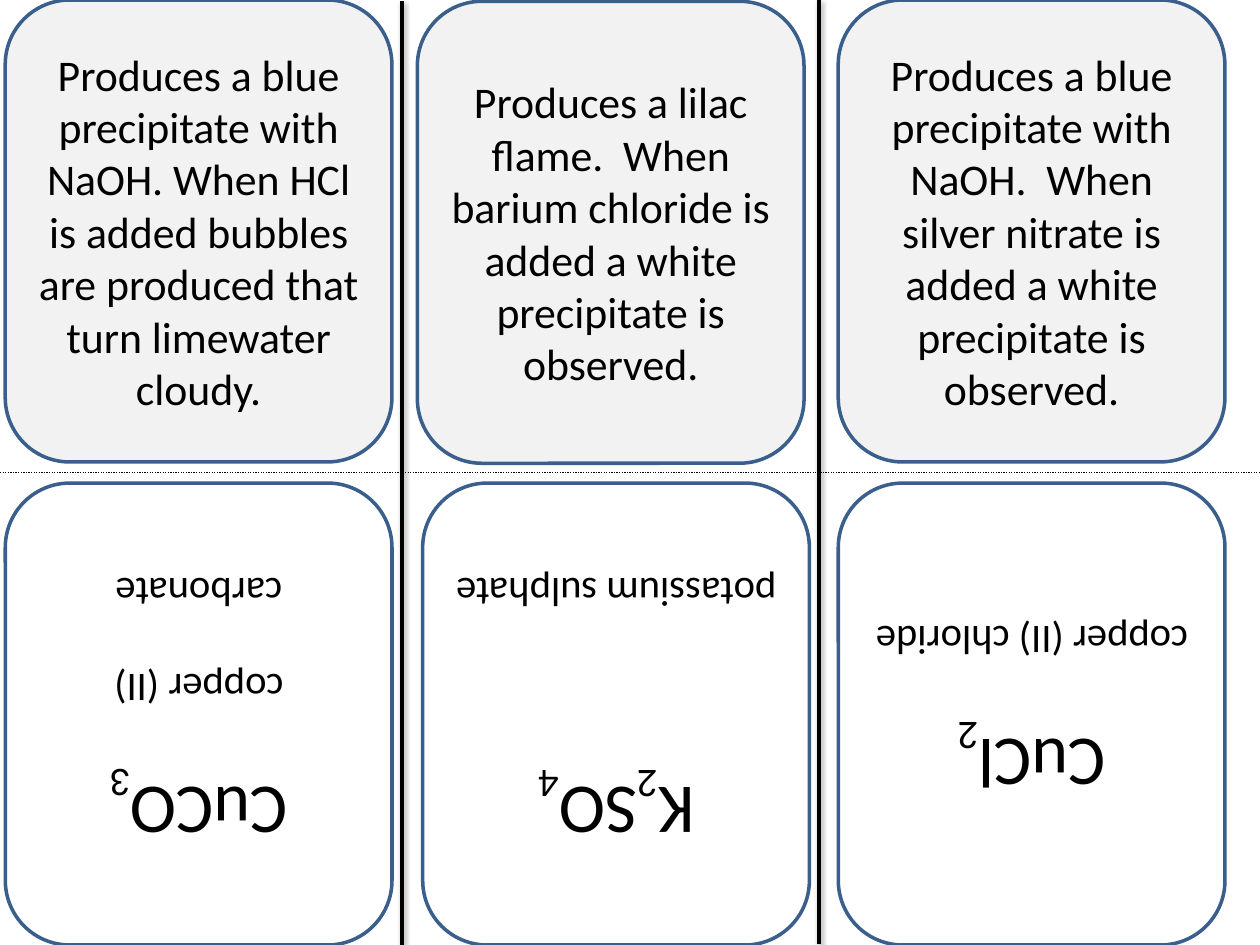
from lxml.etree import SubElement
from pptx import Presentation
from pptx.dml.color import RGBColor
from pptx.enum.dml import MSO_LINE
from pptx.enum.shapes import MSO_CONNECTOR, MSO_SHAPE
from pptx.enum.text import MSO_ANCHOR, PP_ALIGN
from pptx.oxml.ns import qn
from pptx.util import Pt

CARD_W, CARD_H = 221, 264
ANSWER_TOP = 276
CARDS = [
    (3, 0, 3,
     "Produces a blue precipitate with NaOH. When HCl is added bubbles "
     "are produced that turn limewater cloudy.",
     ["CuCO", "3"], "copper (II) carbonate", 0),
    (238.5, 0.75, 241.5,
     "Produces a lilac flame.  When barium chloride is added a white "
     "precipitate is observed.",
     ["K", "2", "SO", "4"], "potassium sulphate", 55),
    (479, 0, 479,
     "Produces a blue precipitate with NaOH.  When silver nitrate is added "
     "a white precipitate is observed.",
     ["CuCl", "2"], "copper (II) chloride", 0),
]


def rgb(value):
    """Turn a hex string into a colour."""
    return RGBColor.from_string(value)


def add_run(p, text, size=40, color="000000", font="Calibri", sub=False):
    """Add a formatted run to a paragraph."""
    r = p.add_run()
    r.text = text
    r.font.size = Pt(size)
    r.font.name = font
    r.font.color.rgb = rgb(color)
    if sub:
        r._r.get_or_add_rPr().set("baseline", "-25000")


def add_card(s, x, y, fill, rotation=0):
    """Add a rounded card and return its text frame."""
    sp = s.shapes.add_shape(MSO_SHAPE.ROUNDED_RECTANGLE,
                            Pt(x), Pt(y), Pt(CARD_W), Pt(CARD_H))
    sp.shadow.inherit = False
    sp.rotation = rotation
    sp.fill.solid()
    sp.fill.fore_color.rgb = rgb(fill)
    sp.line.color.rgb = rgb("3A5F8C")
    sp.line.width = Pt(2)
    tf = sp.text_frame
    tf.word_wrap = True
    tf.vertical_anchor = MSO_ANCHOR.MIDDLE
    tf.paragraphs[0].alignment = PP_ALIGN.CENTER
    return tf


def add_clue(s, x, y, text):
    """Add a card that describes the test results."""
    tf = add_card(s, x, y, "F2F2F2")
    add_run(tf.paragraphs[0], text, size=25)


def add_answer(s, x, formula, name, gap):
    """Add an upside-down card with a formula and the compound name."""
    tf = add_card(s, x, ANSWER_TOP, "FFFFFF", rotation=180)
    for part in formula:
        add_run(tf.paragraphs[0], part, sub=part.isdigit())
    p = tf.add_paragraph()
    p.alignment = PP_ALIGN.CENTER
    p.space_before = Pt(gap)
    add_run(p, name, sub=True)


def add_line(s, x1, y1, x2, y2, width, dash=None, shadow=False):
    """Add a black straight line, dotted or shadowed on request."""
    sp = s.shapes.add_connector(MSO_CONNECTOR.STRAIGHT,
                                Pt(x1), Pt(y1), Pt(x2), Pt(y2))
    sp.line.color.rgb = rgb("000000")
    sp.line.width = Pt(width)
    if dash:
        sp.line.dash_style = dash
    effects = SubElement(sp._element.spPr, qn("a:effectLst"))
    if shadow:
        outer = SubElement(effects, qn("a:outerShdw"), blurRad=str(Pt(3.1)),
                           dist=str(Pt(1.6)), dir="5400000", rotWithShape="0")
        clr = SubElement(outer, qn("a:srgbClr"), val="000000")
        SubElement(clr, qn("a:alpha"), val="38000")


def main():
    """Build the sheet of folding cards."""
    prs = Presentation()
    prs.slide_width, prs.slide_height = Pt(720), Pt(540)
    s = prs.slides.add_slide(prs.slide_layouts[6])
    for x, y, answer_x, clue, formula, name, gap in CARDS:
        add_clue(s, x, y, clue)
        add_answer(s, answer_x, formula, name, gap)
    add_line(s, 0, 270, 720, 270, 0.75, dash=MSO_LINE.ROUND_DOT)
    for x, top in ((229.7, 0.7), (468, 0)):
        add_line(s, x, top, x, top + 539.3, 2, shadow=True)
    prs.save("out.pptx")


if __name__ == "__main__":
    main()
